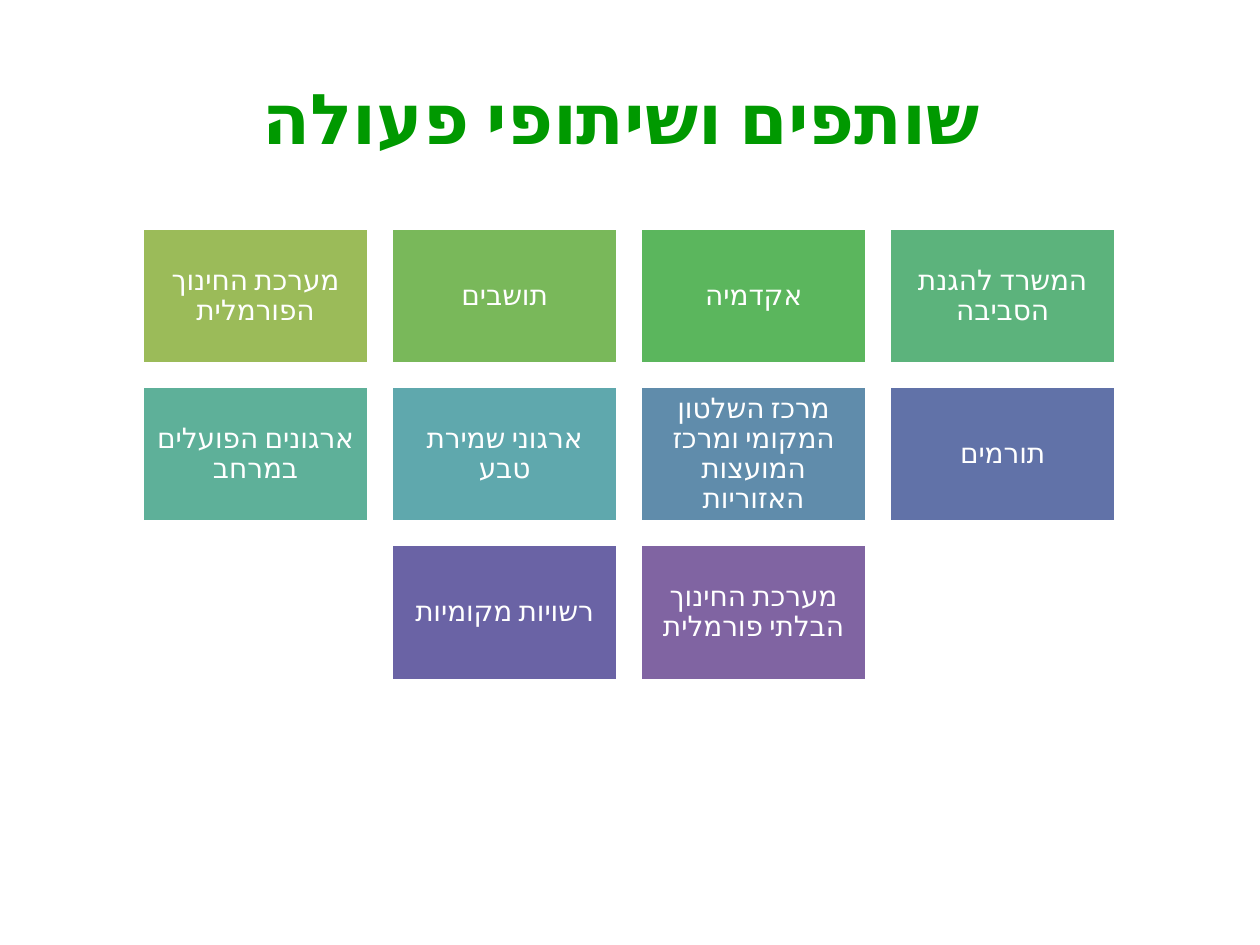
import dataclasses

import lxml.etree
import pptx
import pptx.dml.color
import pptx.enum.lang
import pptx.enum.shapes
import pptx.enum.text
import pptx.oxml.ns
import pptx.util
from pptx.util import Cm

PARTNER_ROWS = [
    [("מערכת החינוך הפורמלית", "9BBB59"), ("תושבים", "79B85A"),
     ("אקדמיה", "5BB65D"), ("המשרד להגנת הסביבה", "5CB37C")],
    [("ארגונים הפועלים במרחב", "5EB099"), ("ארגוני שמירת טבע", "5FA8AD"),
     ("מרכז השלטון המקומי ומרכז המועצות האזוריות", "608CAB"), ("תורמים", "6172A8")],
    [("רשויות מקומיות", "6A63A5"), ("מערכת החינוך הבלתי פורמלית", "8064A2")],
]
COLUMNS = 4
GRID_LEFT, GRID_TOP = 2.87, 4.6
STEP_X, STEP_Y = 5.02, 3.19
TILE_WIDTH, TILE_HEIGHT = 4.57, 2.74


@dataclasses.dataclass(frozen=True)
class Theme:
    title_font: str = "Roboto"
    title_size: int = 40
    title_color: str = "009900"
    tile_font: str = "Calibri"
    tile_size: int = 16
    tile_text: str = "FFFFFF"
    tile_line: str = "FFFFFF"
    tile_line_width: int = 2


def rgb(color):
    return pptx.dml.color.RGBColor.from_string(color)


class SlideBuilder:
    """Builds right-to-left elements on one slide in one theme."""

    def __init__(self, slide, theme):
        self.slide = slide
        self.theme = theme

    def add_text(self, text_frame, text, font_name, size, color, bold=False):
        text_frame.word_wrap = True
        text_frame.vertical_anchor = pptx.enum.text.MSO_ANCHOR.MIDDLE
        paragraph = text_frame.paragraphs[0]
        paragraph.alignment = pptx.enum.text.PP_ALIGN.CENTER
        paragraph._p.get_or_add_pPr().set("rtl", "1")
        run = paragraph.add_run()
        run.text = text
        font = run.font
        font.name, font.size, font.bold = font_name, pptx.util.Pt(size), bold
        font.color.rgb = rgb(color)
        font.language_id = pptx.enum.lang.MSO_LANGUAGE_ID.HEBREW
        lxml.etree.SubElement(run._r.get_or_add_rPr(), pptx.oxml.ns.qn("a:cs"), typeface=font_name)
        return paragraph

    def title(self, text, left, top, width, height):
        shape = self.slide.shapes.title
        shape.left, shape.top, shape.width, shape.height = map(Cm, (left, top, width, height))
        theme = self.theme
        self.add_text(shape.text_frame, text, theme.title_font, theme.title_size,
                      theme.title_color, bold=True)

    def tile(self, text, color, left, top):
        theme = self.theme
        shape = self.slide.shapes.add_shape(
            pptx.enum.shapes.MSO_SHAPE.RECTANGLE,
            Cm(left), Cm(top), Cm(TILE_WIDTH), Cm(TILE_HEIGHT))
        shape.shadow.inherit = False
        shape.fill.solid()
        shape.fill.fore_color.rgb = rgb(color)
        shape.line.color.rgb = rgb(theme.tile_line)
        shape.line.width = pptx.util.Pt(theme.tile_line_width)
        frame = shape.text_frame
        frame.margin_left = frame.margin_right = Cm(0.17)
        frame.margin_top = frame.margin_bottom = Cm(0.17)
        paragraph = self.add_text(frame, text, theme.tile_font, theme.tile_size, theme.tile_text)
        paragraph.line_spacing = 0.9
        paragraph.space_after = pptx.util.Pt(5.6)


def main():
    presentation = pptx.Presentation()
    presentation.slide_width, presentation.slide_height = Cm(25.4), Cm(19.05)
    slide = presentation.slides.add_slide(presentation.slide_layouts.get_by_name("Title Only"))
    builder = SlideBuilder(slide, Theme())
    builder.title(" שותפים ושיתופי פעולה", 1.27, 0.76, 22.86, 3.18)
    for row, partners in enumerate(PARTNER_ROWS):
        first_column = (COLUMNS - len(partners)) / 2
        for column, (name, color) in enumerate(partners):
            builder.tile(name, color, GRID_LEFT + (first_column + column) * STEP_X,
                         GRID_TOP + row * STEP_Y)
    presentation.save("out.pptx")


if __name__ == "__main__":
    main()
